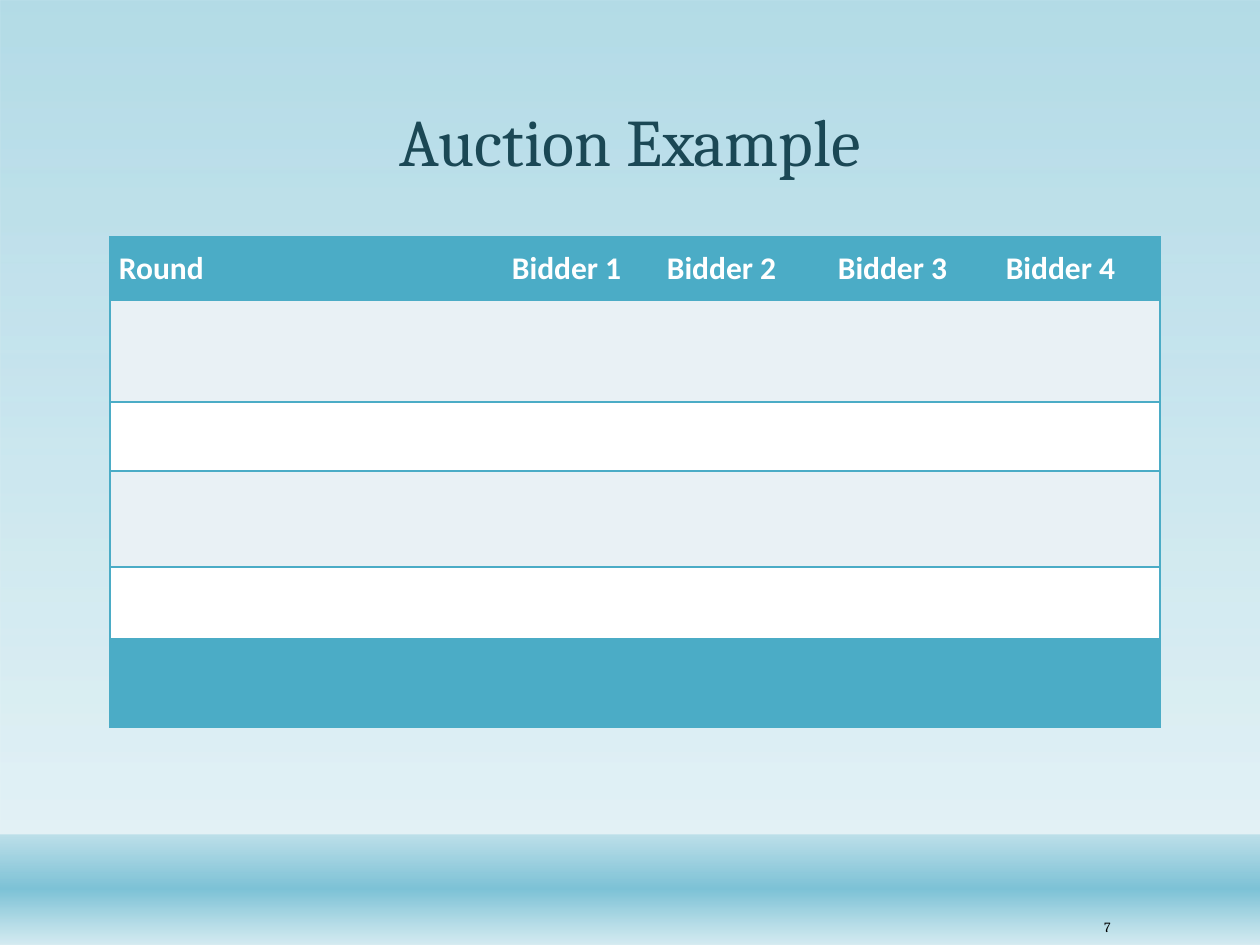
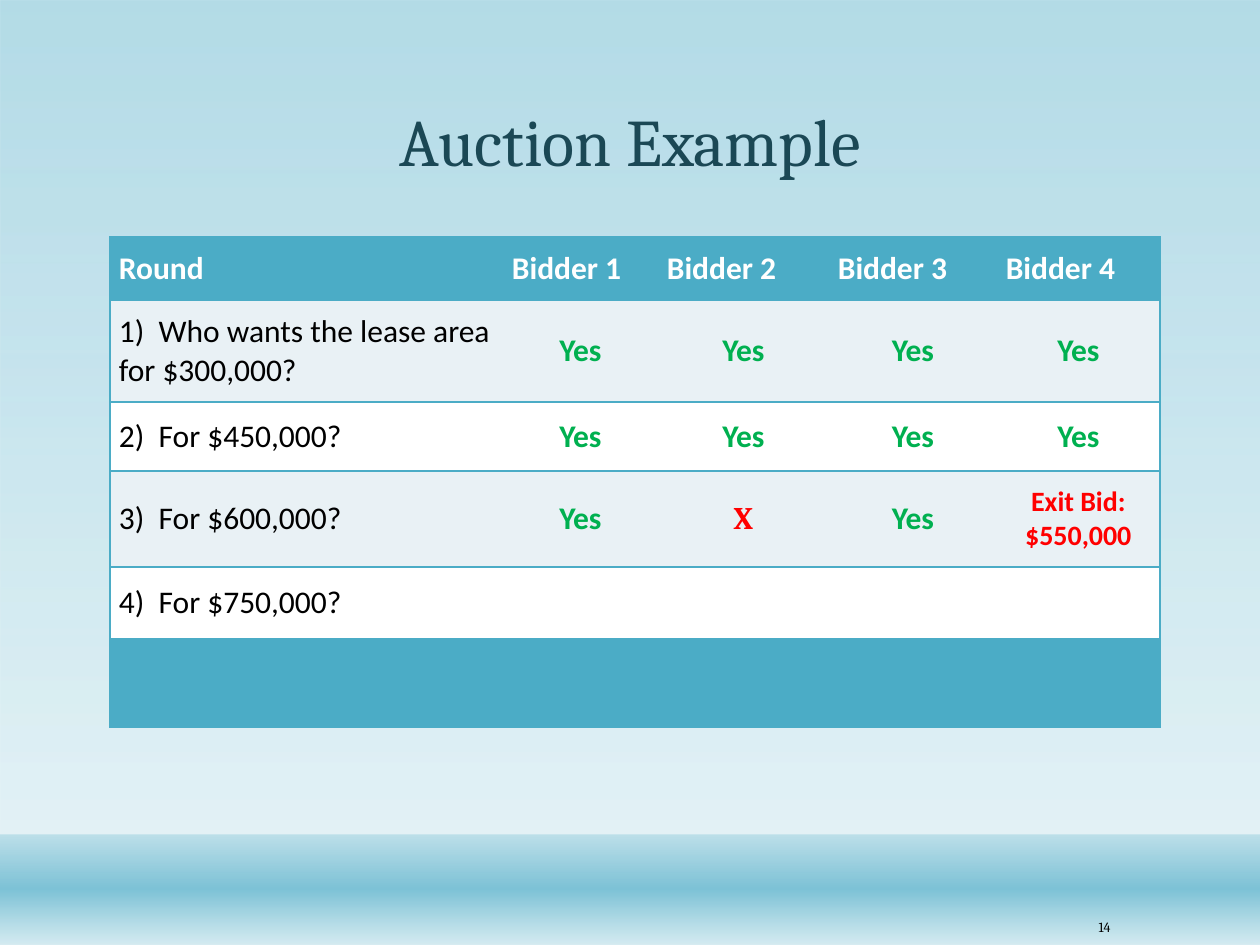
from dataclasses import dataclass

from lxml.etree import SubElement
from pptx import Presentation
from pptx.dml.color import RGBColor
from pptx.enum.shapes import MSO_SHAPE
from pptx.enum.text import MSO_ANCHOR, MSO_AUTO_SIZE, PP_ALIGN
from pptx.oxml.ns import qn
from pptx.util import Emu, Pt


@dataclass(frozen=True)
class Theme:
    """Colours, fonts and type sizes of the deck."""
    teal: str = "4BACC6"
    ink: str = "1B4855"
    black: str = "000000"
    white: str = "FFFFFF"
    pale: str = "E9F1F5"
    green: str = "00B050"
    red: str = "FF0000"
    serif: str = "Cambria"
    sans: str = "Calibri"
    title_size: int = 38
    cell_size: int = 18
    exit_size: int = 16
    number_size: int = 8
    no_grid: str = "{2D5ABB26-0587-4C30-8999-92F81FD0307C}"
    sky: tuple = ((0, "7DC2D6", 58), (88, "D4EBF1", 65))
    horizon: tuple = ((1, "7DC2D6", 38), (49, "7DC2D6", 100), (100, "D4EBF1", 89))


THEME = Theme()
EMU_PER_PX = 914400 / 126
PAGE_SIZE = (1260, 945)
COLUMNS = (393, 155, 171, 168, 163)
ROWS = (63, 102, 69, 96, 72, 88)
ROW_FILLS = (THEME.teal, THEME.pale, THEME.white, THEME.pale, THEME.white, THEME.teal)

HEADER = {"size": THEME.cell_size, "name": THEME.sans, "bold": True, "color": THEME.white}
QUESTION = {**HEADER, "bold": False, "color": THEME.black}
ACCEPT = {**HEADER, "color": THEME.green}
REJECT = {**HEADER, "name": THEME.serif, "color": THEME.red}
EXIT = {**HEADER, "size": THEME.exit_size, "color": THEME.red}
TITLE = {"size": THEME.title_size, "name": THEME.serif, "color": THEME.ink}
NUMBER = {"size": THEME.number_size, "name": THEME.serif, "color": THEME.black}

HEADINGS = [("Round", HEADER)] + [(f"Bidder {bidder}", HEADER) for bidder in range(1, 5)]
YES = ("Yes", ACCEPT)
BIDS = [
    [("1)  Who wants the lease area for $300,000?", QUESTION)] + [YES] * 4,
    [("2)  For $450,000?", QUESTION)] + [YES] * 4,
    [("3)  For $600,000?", QUESTION), YES, ("X", REJECT), YES, ("Exit Bid:\n$550,000", EXIT)],
    [("4)  For $750,000?", QUESTION)],
]


def px(length):
    """Turn pixels into EMU."""
    return Emu(round(length * EMU_PER_PX))


def assign(target, values):
    """Set each named value on the target."""
    for name, value in values.items():
        setattr(target, name, value)


def add_colour(parent, colour, opacity=100):
    """Append an RGB colour element with its opacity in percent."""
    element = SubElement(parent, qn("a:srgbClr"), val=colour)
    if opacity < 100:
        SubElement(element, qn("a:alpha"), val=str(opacity * 1000))


class SlideBuilder:
    """Holds the style and the current slide."""

    def __init__(self, theme):
        """Open an empty deck of the right size."""
        self.theme = theme
        self.deck = Presentation()
        self.page = None
        width, height = PAGE_SIZE
        assign(self.deck, {"slide_width": px(width), "slide_height": px(height)})

    def start_page(self, title, number):
        """Add a page with its bands, number and title."""
        self.page = self.deck.slides.add_slide(self.deck.slide_layouts[5])
        self.band(0, 945, self.theme.sky)
        self.band(835, 110, self.theme.horizon)
        self.number(number)
        self.title(title)

    def band(self, top, height, stops):
        """Draw a full-width band with a vertical gradient."""
        box = self.page.shapes.add_shape(
            MSO_SHAPE.RECTANGLE, 0, px(top), px(PAGE_SIZE[0]), px(height))
        box.shadow.inherit = False
        box.line.fill.background()
        box.fill.gradient()
        box.fill.gradient_angle = 270
        stop_list = box.element.spPr.find(".//" + qn("a:gsLst"))
        stop_list.clear()
        for position, colour, opacity in stops:
            stop = SubElement(stop_list, qn("a:gs"), pos=str(position * 1000))
            add_colour(stop, colour, opacity)

    def text(self, frame, text, style, **paragraph_values):
        """Set one paragraph for each line of text."""
        for index, line in enumerate(text.split("\n")):
            para = frame.add_paragraph() if index else frame.paragraphs[0]
            assign(para, paragraph_values)
            span = para.add_run()
            span.text = line
            assign(span.font, {**{name: value for name, value in style.items() if name != "color"},
                               "size": Pt(style["size"])})
            span.font.color.rgb = RGBColor.from_string(style["color"])

    def title(self, text):
        """Place the title above the bands."""
        box = self.page.shapes.title
        box.element.getparent().append(box.element)
        assign(box, {"left": px(139), "top": px(37), "width": px(982), "height": px(150)})
        assign(box.text_frame, {"vertical_anchor": MSO_ANCHOR.BOTTOM, "word_wrap": True,
                                "auto_size": MSO_AUTO_SIZE.NONE})
        self.text(box.text_frame, text, TITLE, alignment=PP_ALIGN.CENTER, line_spacing=0.9)

    def number(self, number):
        """Put the page number at the lower right."""
        box = self.page.shapes.add_textbox(px(1056), px(910), px(67), px(33))
        assign(box.text_frame, {"vertical_anchor": MSO_ANCHOR.MIDDLE, "word_wrap": True})
        self.text(box.text_frame, str(number), NUMBER, alignment=PP_ALIGN.RIGHT)

    def table(self, rows):
        """Draw the bidding grid and fill in the given rows."""
        frame = self.page.shapes.add_table(
            len(ROWS), len(COLUMNS), px(110), px(237), px(sum(COLUMNS)), px(sum(ROWS)))
        table = frame.table
        assign(table, {"first_row": False, "horz_banding": False})
        frame.element.find(".//" + qn("a:tableStyleId")).text = self.theme.no_grid
        for column, width in zip(table.columns, COLUMNS):
            column.width = px(width)
        for row, height, colour in zip(table.rows, ROWS, ROW_FILLS):
            row.height = px(height)
            for index, cell in enumerate(row.cells):
                self.cell(cell, colour, index)
        for row, entries in zip(table.rows, rows):
            for cell, (text, style) in zip(row.cells, entries):
                left = style in (HEADER, QUESTION)
                self.text(cell.text_frame, text, style,
                          alignment=PP_ALIGN.LEFT if left else PP_ALIGN.CENTER)

    def cell(self, cell, colour, column):
        """Give a cell its margins, borders and fill."""
        assign(cell, {"vertical_anchor": MSO_ANCHOR.MIDDLE, "margin_left": px(9),
                      "margin_right": px(9), "margin_top": px(6), "margin_bottom": px(6)})
        properties = cell._tc.get_or_add_tcPr()
        sides = {"L": column == 0, "R": column == len(COLUMNS) - 1, "T": True, "B": True}
        for side, visible in sides.items():
            if visible:
                line = SubElement(properties, qn(f"a:ln{side}"), w=str(Pt(1)))
                add_colour(SubElement(line, qn("a:solidFill")), self.theme.teal)
        cell.fill.solid()
        cell.fill.fore_color.rgb = RGBColor.from_string(colour)


def main():
    """Build the two auction pages."""
    builder = SlideBuilder(THEME)
    for number, bids in ((7, []), (14, BIDS)):
        builder.start_page("Auction Example", number)
        builder.table([HEADINGS] + bids)
    builder.deck.save("out.pptx")


if __name__ == "__main__":
    main()
